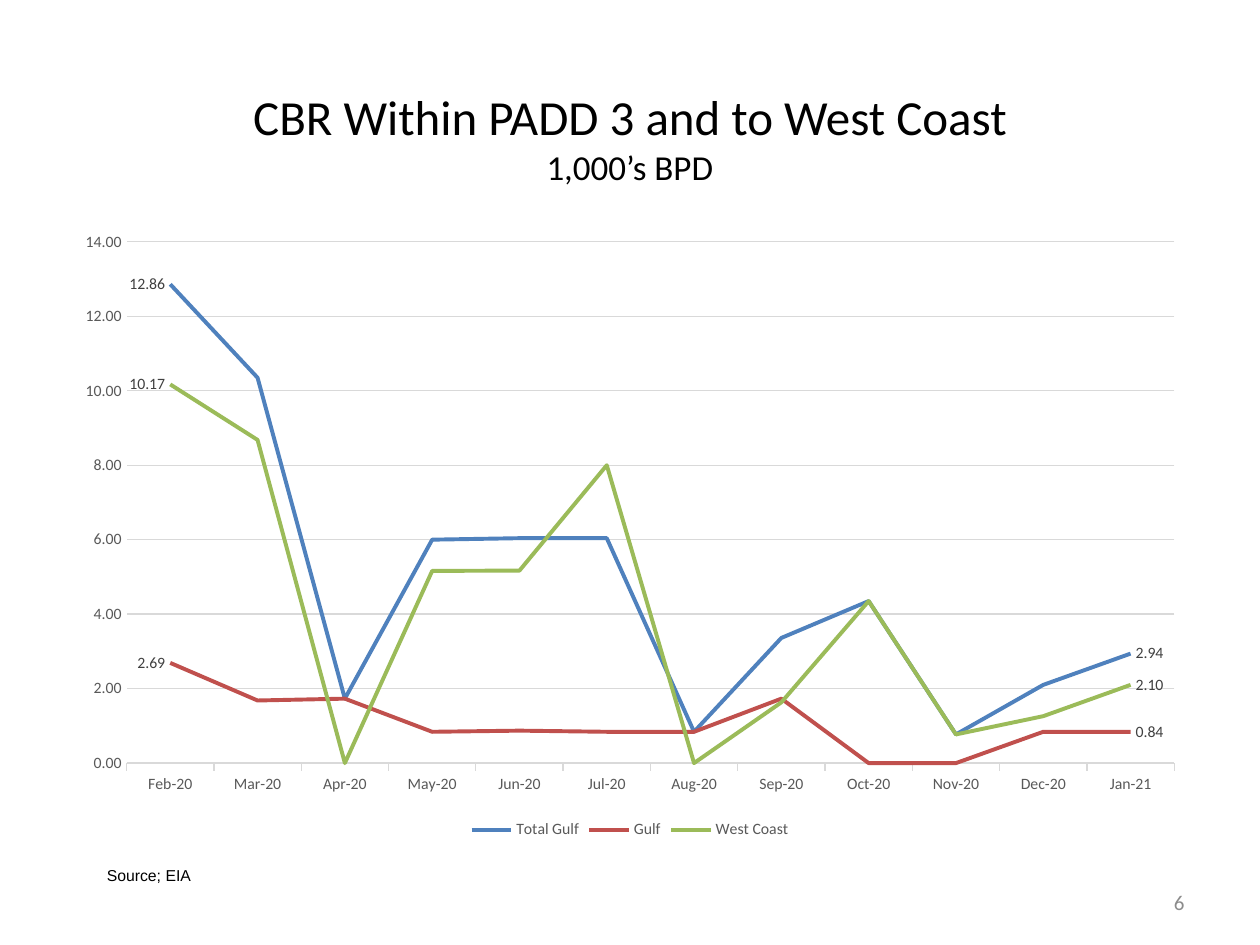
from dataclasses import dataclass
from pptx import Presentation
from pptx.chart.data import CategoryChartData
from pptx.dml.color import RGBColor as RGB
from pptx.enum.chart import XL_CHART_TYPE as Chart, XL_LABEL_POSITION as Pos
from pptx.enum.chart import XL_LEGEND_POSITION as Legend, XL_TICK_MARK as Tick
from pptx.enum.text import MSO_ANCHOR as Anchor, PP_ALIGN as Align
from pptx.util import Inches, Pt


@dataclass(frozen=True)
class Theme:
    font: str = "Calibri"
    note_font: str = "Arial"
    ink: str = "000000"
    muted: str = "595959"
    label: str = "404040"
    number: str = "8C8C8C"
    grid: str = "D9D9D9"
    series: tuple = ("4F81BD", "C0504D", "9BBB59")
    title: int = 28
    subtitle: int = 20
    page: int = 12
    small: int = 9


MONTHS = ["Feb-20", "Mar-20", "Apr-20", "May-20", "Jun-20", "Jul-20",
          "Aug-20", "Sep-20", "Oct-20", "Nov-20", "Dec-20", "Jan-21"]
VOLUMES = {
    "Total Gulf": [12.86, 10.35, 1.73, 6, 6.04, 6.04, 0.84, 3.36, 4.35, 0.77, 2.1, 2.94],
    "Gulf": [2.69, 1.68, 1.73, 0.84, 0.87, 0.84, 0.84, 1.73, 0, 0, 0.84, 0.84],
    "West Coast": [10.17, 8.68, 0, 5.16, 5.17, 8, 0, 1.63, 4.35, 0.77, 1.26, 2.1],
}


class Deck:
    def __init__(self, theme):
        self.theme = theme
        self.prs = Presentation()
        self.prs.slide_width, self.prs.slide_height = Inches(10), Inches(7.5)
        self.s = self.prs.slides.add_slide(self.prs.slide_layouts[6])

    def box(self, x, y, w, h):
        width, height = self.prs.slide_width, self.prs.slide_height
        return int(x * width), int(y * height), int(w * width), int(h * height)

    def style(self, font, size, color, name=None):
        font.size, font.name = Pt(size), name or self.theme.font
        font.color.rgb = RGB.from_string(color)

    def line(self, fmt, color, width):
        fmt.line.color.rgb = RGB.from_string(color)
        fmt.line.width = Pt(width)

    def text(self, area, text, sizes, color, align=Align.LEFT, anchor=Anchor.MIDDLE, name=None):
        tf = self.s.shapes.add_textbox(*self.box(*area)).text_frame
        tf.word_wrap, tf.vertical_anchor = True, anchor
        p = tf.paragraphs[0]
        p.text, p.alignment = text, align
        for r, size in zip(p.runs, sizes):
            self.style(r.font, size, color, name)

    def line_chart(self, area, months, volumes):
        t = self.theme
        data = CategoryChartData(number_format="0.00")
        data.categories = months
        for name, values in volumes.items():
            data.add_series(name, values)
        chart = self.s.shapes.add_chart(Chart.LINE, *self.box(*area), data).chart
        self.style(chart.font, t.small, t.muted)
        chart.has_title = False
        chart.has_legend = True
        chart.legend.position = Legend.BOTTOM
        chart.legend.include_in_layout = False
        self.style(chart.legend.font, t.small, t.muted)
        self.axes(chart)
        for series, color in zip(chart.plots[0].series, t.series):
            series.smooth = False
            self.line(series.format, color, 2.25)
            series.data_labels.show_value = False
            for i, pos in ((0, Pos.LEFT), (len(months) - 1, Pos.RIGHT)):
                label = series.points[i].data_label
                self.style(label.font, t.small, t.label)
                label.position = pos

    def axes(self, chart):
        t = self.theme
        cat, val = chart.category_axis, chart.value_axis
        for axis in (cat, val):
            self.style(axis.tick_labels.font, t.small, t.muted)
        cat.major_tick_mark = Tick.OUTSIDE
        self.line(cat.format, t.grid, 0.75)
        val.minimum_scale, val.maximum_scale, val.major_unit = 0, 14, 2
        val.major_tick_mark = Tick.NONE
        val.format.line.fill.background()
        val.tick_labels.number_format = "0.00"
        val.tick_labels.number_format_is_linked = False
        self.line(val.major_gridlines.format, t.grid, 0.75)


def main():
    t = Theme()
    deck = Deck(t)
    deck.text((0.05, 0.08, 0.9, 0.13), "CBR Within PADD 3 and to West Coast\v1,000’s BPD",
              (t.title, t.subtitle), t.ink, Align.CENTER)
    deck.text((0.72, 0.93, 0.23, 0.05), "6", (t.page,), t.number, Align.RIGHT)
    deck.text((0.075, 0.91, 0.12, 0.03), "Source; EIA", (t.small,), t.ink,
              anchor=Anchor.TOP, name=t.note_font)
    deck.line_chart((0.05, 0.233, 0.9, 0.66), MONTHS, VOLUMES)
    deck.prs.save("out.pptx")


if __name__ == "__main__":
    main()
